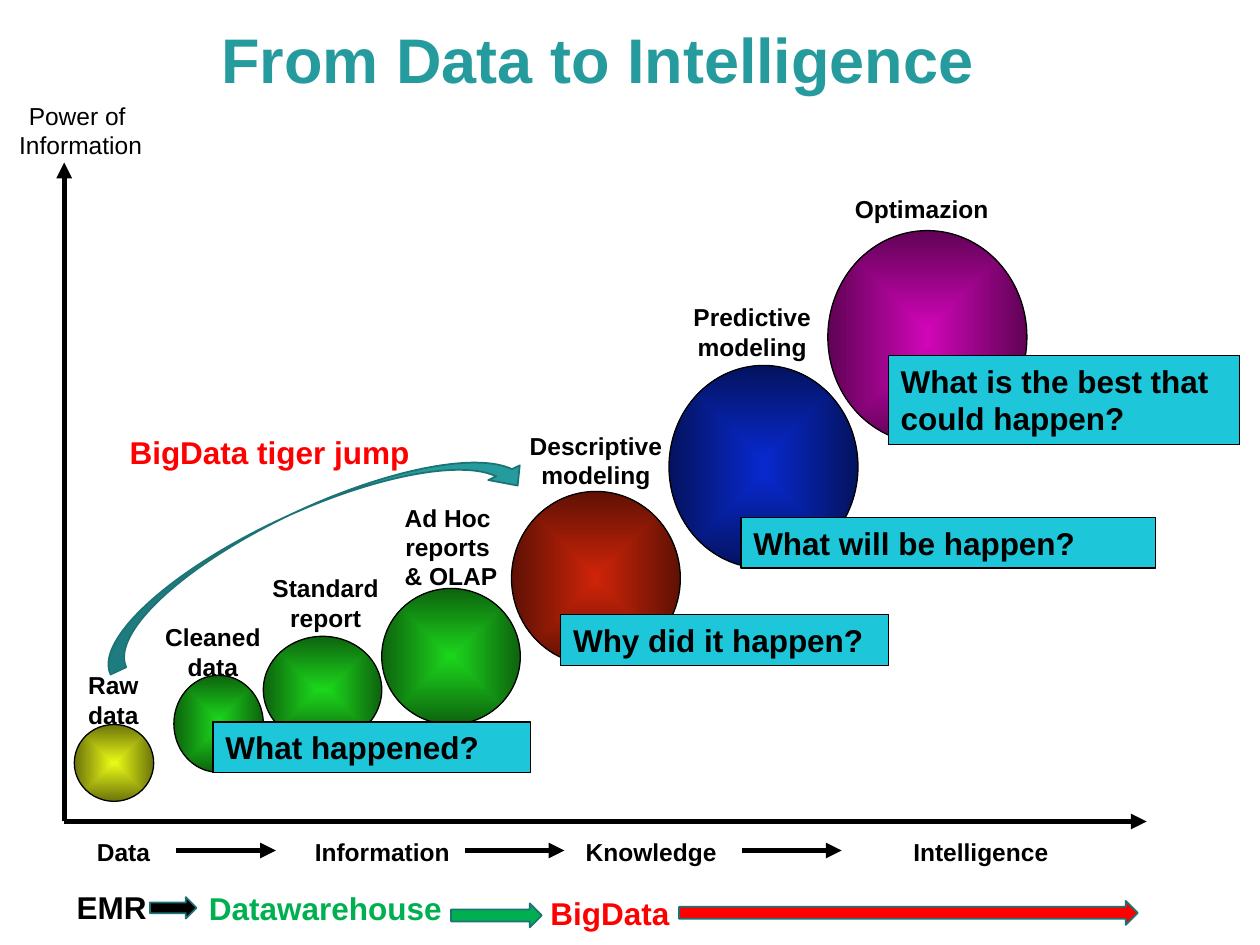
from lxml import etree
from pptx import Presentation
from pptx.dml.color import RGBColor
from pptx.enum.shapes import MSO_CONNECTOR, MSO_SHAPE
from pptx.enum.text import MSO_ANCHOR, PP_ALIGN
from pptx.oxml import parse_xml
from pptx.oxml.ns import nsdecls, qn
from pptx.util import Inches, Pt

STRAIGHT = MSO_CONNECTOR.STRAIGHT
OVAL, RECTANGLE = MSO_SHAPE.OVAL, MSO_SHAPE.RECTANGLE
RIGHT_ARROW, CURVED_ARROW = MSO_SHAPE.RIGHT_ARROW, MSO_SHAPE.CURVED_DOWN_ARROW
LEFT, CENTER = PP_ALIGN.LEFT, PP_ALIGN.CENTER
TOP = MSO_ANCHOR.TOP

BLACK = RGBColor(0x00, 0x00, 0x00)
TEAL = RGBColor(0x26, 0x9B, 0x9E)
DARK_TEAL = RGBColor(0x1C, 0x73, 0x75)
CYAN = RGBColor(0x1D, 0xC7, 0xD9)
RED = RGBColor(0xFF, 0x00, 0x00)
GREEN = RGBColor(0x00, 0xB0, 0x50)
# Sphere gradients: centre, rim
YELLOW_BALL = (RGBColor(0xEA, 0xFA, 0x16), RGBColor(0x6C, 0x74, 0x0A))
GREEN_BALL = (RGBColor(0x1C, 0xD6, 0x1C), RGBColor(0x0D, 0x63, 0x0D))
RED_BALL = (RGBColor(0xCE, 0x24, 0x08), RGBColor(0x5F, 0x11, 0x04))
BLUE_BALL = (RGBColor(0x08, 0x29, 0xCE), RGBColor(0x04, 0x13, 0x5F))
PURPLE_BALL = (RGBColor(0xD0, 0x06, 0xB8), RGBColor(0x60, 0x03, 0x55))

# Boxes are (left, top, width, height) in inches
TITLE = ("From Data to Intelligence", (1.66, 0.11, 6.37, 0.71))
AXIS_LABEL = (["Power of ", "Information"], (0.03, 0.75, 1.22, 0.57))

# Label lines, label box, sphere box, sphere colours, question and its box
STAGES = [
    (["Raw", "data"], (0.6, 5.27, 0.6, 0.57),
     (0.59, 5.75, 0.63, 0.61), YELLOW_BALL, None),
    (["Cleaned", "data"], (1.21, 4.89, 0.96, 0.57),
     (1.38, 5.36, 0.71, 0.77), GREEN_BALL, None),
    (["Standard", "report"], (2.06, 4.5, 1.05, 0.57),
     (2.09, 5.05, 0.94, 0.85), GREEN_BALL, None),
    (["Ad Hoc ", "reports ", "& OLAP"], (3.11, 3.94, 0.94, 0.81),
     (3.03, 4.67, 1.1, 1.08), GREEN_BALL,
     ("What happened?", (1.69, 5.73, 2.52, 0.4))),
    (["Descriptive", "modeling"], (4.1, 3.37, 1.26, 0.57),
     (4.06, 3.9, 1.34, 1.38), RED_BALL,
     ("Why did it happen?", (4.45, 4.88, 2.6, 0.4))),
    (["Predictive", "modeling"], (5.4, 2.35, 1.14, 0.57),
     (5.31, 2.9, 1.5, 1.61), BLUE_BALL,
     ("What will be happen?", (5.88, 4.11, 3.29, 0.4))),
    (["Optimazion"], (6.68, 1.49, 1.27, 0.34),
     (6.57, 1.83, 1.58, 1.69), PURPLE_BALL,
     ("What is the best that could happen?", (7.05, 2.82, 2.79, 0.71))),
]

# Horizontal axis: step name, left, width, start of the arrow that follows
STEPS = [
    ("Data", 0.67, 0.62, 1.4),
    ("Information", 2.4, 1.28, 3.69),
    ("Knowledge", 4.55, 1.24, 5.89),
    ("Intelligence", 7.15, 1.28, None),
]
STEP_TOP, STEP_HEIGHT, STEP_ARROW_Y, STEP_ARROW_LENGTH = 6.59, 0.34, 6.75, 0.79
ORIGIN, AXIS_TOP, AXIS_RIGHT = (0.51, 6.52), 1.29, 9.1

# Systems row: name, colour, text box, arrow box
SYSTEMS = [
    ("BigData", RED, (4.27, 7.05, 1.16, 0.4), (5.39, 7.15, 3.64, 0.19)),
    ("Datawarehouse", GREEN, (1.56, 7.01, 2.07, 0.4), (3.58, 7.17, 0.72, 0.19)),
    ("EMR", BLACK, (0.51, 7, 0.76, 0.4), (1.19, 7.12, 0.37, 0.17)),
]
JUMP_TEXT = ("BigData tiger jump", (0.93, 3.39, 2.45, 0.4))
JUMP_ARROW, JUMP_ANGLE = (0.59, 4.05, 3.7, 0.55), 335.1

presentation = Presentation()
presentation.slide_width, presentation.slide_height = Inches(10), Inches(7.5)
slide = presentation.slides.add_slide(presentation.slide_layouts[6])


def inches(box):
    return [Inches(value) for value in box]


def write(shape, lines, size, color=BLACK, bold=True, align=LEFT, wrap=False):
    frame = shape.text_frame
    frame.word_wrap = wrap
    frame.vertical_anchor = TOP
    for index, line in enumerate(lines):
        paragraph = frame.add_paragraph() if index else frame.paragraphs[0]
        paragraph.alignment = align
        run = paragraph.add_run()
        run.text = line
        run.font.name, run.font.size, run.font.bold = "Arial", Pt(size), bold
        run.font.color.rgb = color


def add_text(lines, box, size, **style):
    write(slide.shapes.add_textbox(*inches(box)), lines, size, **style)


def add_filled(kind, box, fill, line=BLACK, width=0.75):
    shape = slide.shapes.add_shape(kind, *inches(box))
    shape.shadow.inherit = False
    shape.fill.solid()
    shape.fill.fore_color.rgb = fill
    shape.line.color.rgb = line
    shape.line.width = Pt(width)
    return shape


def add_sphere(box, colors):
    center, rim = colors
    sphere = add_filled(OVAL, box, center)
    solid = sphere.element.spPr.find(qn("a:solidFill"))
    gradient = parse_xml(
        f'<a:gradFill {nsdecls("a")} rotWithShape="1"><a:gsLst>'
        f'<a:gs pos="0"><a:srgbClr val="{center}"/></a:gs>'
        f'<a:gs pos="100000"><a:srgbClr val="{rim}"/></a:gs></a:gsLst>'
        '<a:path path="shape"><a:fillToRect l="50000" t="50000" r="50000" b="50000"/>'
        '</a:path></a:gradFill>')
    solid.getparent().replace(solid, gradient)


def add_arrow(start, end):
    arrow = slide.shapes.add_connector(STRAIGHT, *inches(start + end))
    arrow.line.color.rgb = BLACK
    arrow.line.width = Pt(3)
    etree.SubElement(arrow.line._get_or_add_ln(), qn("a:tailEnd"), type="triangle")
    etree.SubElement(arrow.element.spPr, qn("a:effectLst"))


# Axes
add_arrow(ORIGIN, (ORIGIN[0], AXIS_TOP))
add_arrow(ORIGIN, (AXIS_RIGHT, ORIGIN[1]))
add_text(*AXIS_LABEL, 14, bold=False, align=CENTER)

# Steps along the horizontal axis
for name, left, width, arrow_left in STEPS:
    add_text([name], (left, STEP_TOP, width, STEP_HEIGHT), 14)
    if arrow_left is not None:
        add_arrow((arrow_left, STEP_ARROW_Y),
                  (arrow_left + STEP_ARROW_LENGTH, STEP_ARROW_Y))

# Spheres with their questions, then the labels on top
for _, _, sphere_box, colors, question in STAGES:
    add_sphere(sphere_box, colors)
    if question:
        text, box = question
        write(add_filled(RECTANGLE, box, CYAN), [text], 18, wrap=True)
for lines, label_box, _, _, _ in STAGES:
    add_text(lines, label_box, 14, align=CENTER)

# Title
add_text([TITLE[0]], TITLE[1], 36, color=TEAL)

# Systems row
for name, color, text_box, arrow_box in SYSTEMS:
    add_text([name], text_box, 18, color=color)
    add_filled(RIGHT_ARROW, arrow_box, color, DARK_TEAL, 1)

# Tiger jump
jump = add_filled(CURVED_ARROW, JUMP_ARROW, TEAL, DARK_TEAL, 1)
jump.rotation = JUMP_ANGLE
add_text([JUMP_TEXT[0]], JUMP_TEXT[1], 18, color=RED)

presentation.save("out.pptx")
